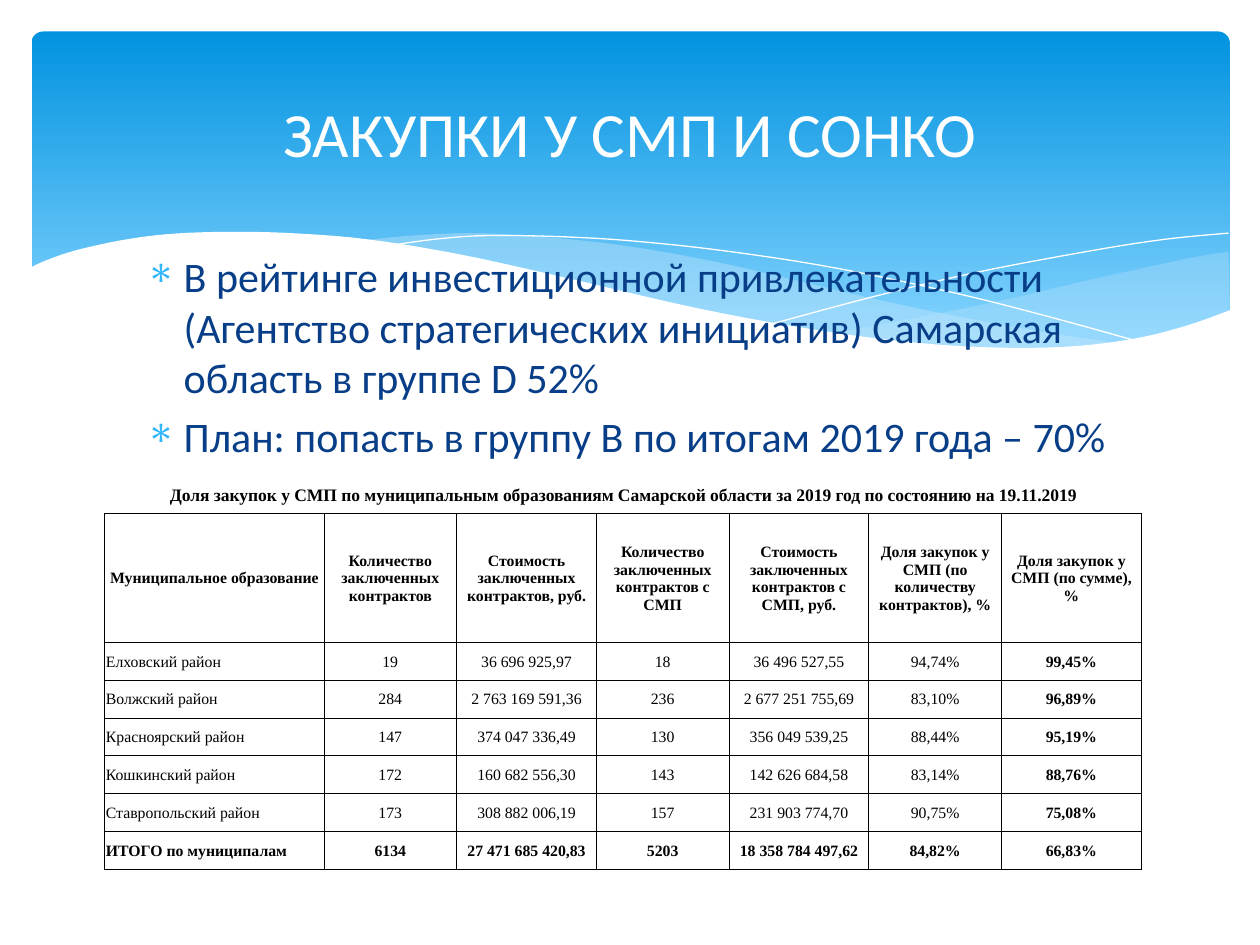
"""Build the slide on purchases from small businesses and non-profits."""
from dataclasses import dataclass
from typing import Optional

from pptx import Presentation
from pptx.dml.color import RGBColor
from pptx.enum.shapes import MSO_SHAPE
from pptx.enum.text import MSO_ANCHOR as ANCHOR, PP_ALIGN as ALIGN
from pptx.oxml.ns import qn
from pptx.oxml.xmlchemy import OxmlElement as Element
from pptx.util import Pt

WHITE = RGBColor(0xFF, 0xFF, 0xFF)
BLACK = RGBColor(0x00, 0x00, 0x00)
NAVY = RGBColor(0x07, 0x3E, 0x87)
SKY = RGBColor(0x31, 0xB6, 0xFD)
BAND_TOP = RGBColor(0x02, 0x93, 0xE0)
BAND_BOTTOM = RGBColor(0x83, 0xD3, 0xFE)
PALE = RGBColor(0xC6, 0xE7, 0xFC)

SANS = "Calibri"
SERIF = "Times New Roman"

Points = list[tuple[float, float]]


@dataclass
class Wave:
    edges: list[Points]
    fill: Optional[RGBColor] = None
    opacity: int = 100


@dataclass
class TextStyle:
    font: str
    size: float
    color: RGBColor
    bold: bool = False


WAVES = [
    Wave([[(702, 144), (682.6, 146.9), (652.3, 153.4), (619.9, 160.6),
           (560.9, 174.2), (475.9, 190.8)],
          [(475.9, 190.8), (517.7, 195.8), (562.3, 199.4), (593.3, 199.8),
           (627.8, 197.3), (663.1, 190.8), (702.7, 177.8)]], PALE, 29),
    Wave([[(643, 196.6), (602.6, 190.8), (558, 182.9), (508.3, 172.8),
           (452.9, 159.8), (409.7, 149.8), (361.4, 141.1), (318.2, 136.1),
           (273.6, 133.2), (236.2, 134.6), (205.9, 137.5)],
          [(205.9, 137.5), (260.6, 146.2), (323.3, 159.8), (407.5, 178.6),
           (456.5, 187.9), (510.5, 195.8), (556.6, 199.4), (596.2, 200.2),
           (643, 196.6)]], PALE, 40),
    Wave([[(222.5, 140.4), (247.7, 136.8), (278.6, 134.6), (324, 135.4),
           (367.2, 138.2), (419, 144), (478.8, 153.4), (547.2, 167.8),
           (598.3, 180.7), (653, 195.8)]]),
    Wave([[(441.4, 185), (500.4, 169.2), (558.7, 155.5), (623.5, 143.3),
           (665.3, 136.8), (702, 133.2)]]),
    Wave([[(703.4, 177.1), (676.8, 186.5), (647.3, 193.7), (612, 198),
           (571, 198.7), (522.7, 195.8), (466.6, 188.6), (399.6, 176.4),
           (321.8, 158.4), (262.8, 145.4), (210.2, 136.8), (165.6, 133.2),
           (127.4, 132.5), (95, 133.9), (68.4, 137.5), (42.5, 143.3),
           (25.9, 149), (16.6, 153.4)],
          [(16.6, 236.9), (703.4, 236.9)]], WHITE),
]

TITLE = "ЗАКУПКИ У СМП И СОНКО"
BULLETS = [
    "В рейтинге инвестиционной привлекательности (Агентство стратегических "
    "инициатив) Самарская область в группе D 52%",
    "План: попасть в группу В по итогам 2019 года – 70%",
]
CAPTION = ("Доля закупок у СМП по муниципальным образованиям Самарской области "
           "за 2019 год по состоянию на 19.11.2019")
ROWS = [
    ["Муниципальное образование", "Количество заключенных контрактов",
     "Стоимость заключенных контрактов, руб.",
     "Количество заключенных контрактов с СМП",
     "Стоимость заключенных контрактов с СМП, руб.",
     "Доля закупок у СМП (по количеству контрактов), %",
     "Доля закупок у СМП (по сумме), %"],
    ["Елховский район", "19", "36 696 925,97", "18", "36 496 527,55", "94,74%", "99,45%"],
    ["Волжский район", "284", "2 763 169 591,36", "236", "2 677 251 755,69", "83,10%", "96,89%"],
    ["Красноярский район", "147", "374 047 336,49", "130", "356 049 539,25", "88,44%", "95,19%"],
    ["Кошкинский район", "172", "160 682 556,30", "143", "142 626 684,58", "83,14%", "88,76%"],
    ["Ставропольский район", "173", "308 882 006,19", "157", "231 903 774,70", "90,75%", "75,08%"],
    ["ИТОГО по муниципалам", "6134", "27 471 685 420,83", "5203", "18 358 784 497,62",
     "84,82%", "66,83%"],
]
COL_WIDTHS = [125.3] + [75.8, 79.9] * 3
ROW_HEIGHTS = [20.6, 73.6] + [21.65] * 6


def smooth(knots: Points, steps: int = 5) -> Points:
    """Return points on a Catmull-Rom curve through the knots."""
    if len(knots) < 3:
        return knots
    padded = [knots[0], *knots, knots[-1]]
    curve = [knots[0]]
    for a, b, c, d in zip(padded, padded[1:], padded[2:], padded[3:]):
        for t in (i / steps for i in range(1, steps + 1)):
            x, y = (q + t / 2 * (r - p + t * (2 * p - 5 * q + 4 * r - s
                                              + t * (3 * (q - r) + s - p)))
                    for p, q, r, s in zip(a, b, c, d))
            curve.append((x, y))
    return curve


def draw_band(s) -> None:
    """Draw the blue gradient panel behind the title."""
    sp = s.shapes.add_shape(MSO_SHAPE.ROUNDED_RECTANGLE, Pt(18), Pt(18), Pt(684.7), Pt(194.4))
    sp.adjustments[0] = 0.034
    sp.shadow.inherit = False
    sp.line.fill.background()
    sp.fill.gradient()
    sp.fill.gradient_angle = 270
    for stop, color, position in zip(sp.fill.gradient_stops, (BAND_TOP, BAND_BOTTOM), (0, 0.9)):
        stop.color.rgb = color
        stop.position = position


def draw_wave(s, wave: Wave) -> None:
    """Draw a filled wave, or a white hairline when it has no fill."""
    start, *rest = [(Pt(x), Pt(y)) for edge in wave.edges for x, y in smooth(edge)]
    builder = s.shapes.build_freeform(*start, scale=1.0)
    builder.add_line_segments(rest, close=wave.fill is not None)
    sp = builder.convert_to_shape()
    sp.shadow.inherit = False
    if wave.fill is None:
        sp.fill.background()
        sp.line.color.rgb = WHITE
        sp.line.width = Pt(0)
        return
    sp.line.fill.background()
    sp.fill.solid()
    sp.fill.fore_color.rgb = wave.fill
    if wave.opacity < 100:
        alpha = Element("a:alpha")
        alpha.set("val", str(wave.opacity * 1000))
        sp.fill._xPr.find(qn("a:solidFill"))[0].append(alpha)


def add_run(p, text: str, style: TextStyle) -> None:
    """Add one styled run to a paragraph."""
    r = p.add_run()
    r.text = text
    r.font.name, r.font.size, r.font.bold = style.font, Pt(style.size), style.bold
    r.font.color.rgb = style.color


def add_bullet(p) -> None:
    """Give a paragraph a hanging sky-blue asterisk."""
    pPr = p._p.get_or_add_pPr()
    pPr.set("marL", str(Pt(21.6)))
    pPr.set("indent", str(Pt(-21.6)))
    color, font, char = (Element(f"a:{tag}") for tag in ("buClr", "buFont", "buChar"))
    rgb = Element("a:srgbClr")
    rgb.set("val", str(SKY))
    color.append(rgb)
    font.set("typeface", "Symbol")
    char.set("char", "∗")
    pPr.extend([color, font, char])


def add_text(s, box: tuple, paragraphs: list[str], style: TextStyle, bulleted: bool) -> None:
    """Add a bulleted list or a centred heading."""
    tf = s.shapes.add_textbox(*map(Pt, box)).text_frame
    tf.word_wrap = True
    tf.vertical_anchor = ANCHOR.TOP if bulleted else ANCHOR.MIDDLE
    for i, text in enumerate(paragraphs):
        p = tf.add_paragraph() if i else tf.paragraphs[0]
        if bulleted:
            p.space_before = Pt(style.size * 0.2)
            add_bullet(p)
        else:
            p.alignment = ALIGN.CENTER
        add_run(p, text, style)


def fill_cell(cell, text: str, style: TextStyle, align: ALIGN, sides: str) -> None:
    """Write a cell and rule the given sides."""
    cell.margin_left = cell.margin_right = cell.margin_top = Pt(0.72)
    cell.margin_bottom = Pt(0)
    cell.vertical_anchor = ANCHOR.MIDDLE
    for side in sides:
        ln, solid, rgb = (Element(f"a:{tag}") for tag in (f"ln{side}", "solidFill", "srgbClr"))
        ln.set("w", str(Pt(0.5)))
        rgb.set("val", str(BLACK))
        solid.append(rgb)
        ln.append(solid)
        cell._tc.get_or_add_tcPr().append(ln)
    cell.fill.background()
    p = cell.text_frame.paragraphs[0]
    p.alignment = align
    if text:
        add_run(p, text, style)


def draw_table(s) -> None:
    """Draw the captioned table of purchase shares."""
    table = s.shapes.add_table(len(ROW_HEIGHTS), len(COL_WIDTHS), Pt(59.8), Pt(272.8),
                               Pt(sum(COL_WIDTHS)), Pt(sum(ROW_HEIGHTS))).table
    table.first_row = table.horz_banding = False
    for column, width in zip(table.columns, COL_WIDTHS):
        column.width = Pt(width)
    for row, height in zip(table.rows, ROW_HEIGHTS):
        row.height = Pt(height)
    last = len(COL_WIDTHS) - 1
    table.cell(0, 0).merge(table.cell(0, last))
    for j in range(last + 1):
        fill_cell(table.cell(0, j), "" if j else CAPTION,
                  TextStyle(SERIF, 10, BLACK, True), ALIGN.CENTER, "B")
    for i, row in enumerate(ROWS):
        for j, text in enumerate(row):
            bold = i in (0, len(ROWS) - 1) or j == last
            align = ALIGN.LEFT if i and j == 0 else ALIGN.CENTER
            fill_cell(table.cell(i + 1, j), text, TextStyle(SERIF, 9, BLACK, bold), align, "LRTB")


def main() -> None:
    """Build and save the slide."""
    prs = Presentation()
    prs.slide_width, prs.slide_height = Pt(720), Pt(540)
    s = prs.slides.add_slide(prs.slide_layouts[6])
    draw_band(s)
    for wave in WAVES:
        draw_wave(s, wave)
    add_text(s, (76.3, 139.7, 583.2, 362.9), BULLETS, TextStyle(SANS, 24, NAVY), True)
    add_text(s, (36, 26.6, 648, 98.6), [TITLE], TextStyle(SANS, 36, WHITE), False)
    draw_table(s)
    prs.save("out.pptx")


if __name__ == "__main__":
    main()
